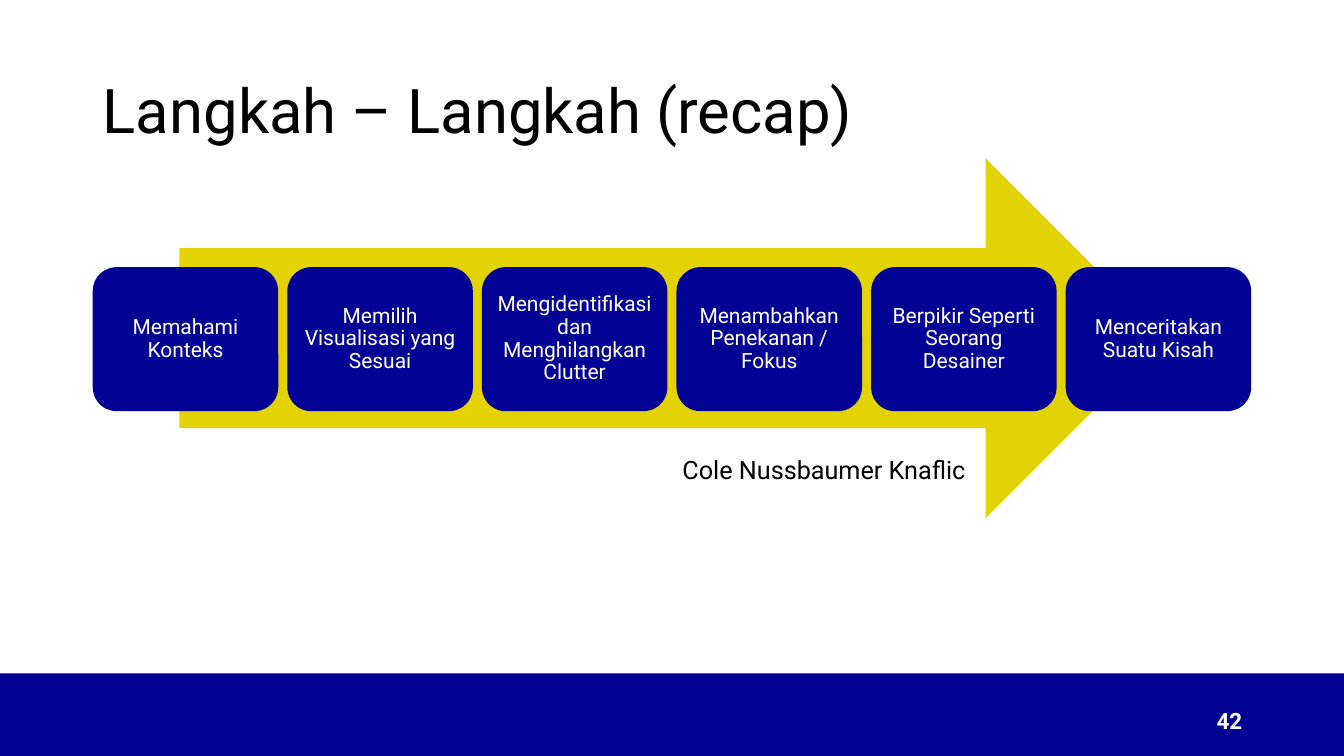
from dataclasses import dataclass

from pptx import Presentation
from pptx import util as u
from pptx.dml.color import RGBColor
from pptx.enum import shapes, text

COLORS = {"navy": "020294", "yellow": "E4D304", "white": "FFFFFF", "black": "000000"}
FONT = "Roboto"
STEPS = [
    "Memahami Konteks",
    "Memilih Visualisasi yang Sesuai",
    "Mengidentifikasi dan Menghilangkan Clutter",
    "Menambahkan Penekanan / Fokus",
    "Berpikir Seperti Seorang Desainer",
    "Menceritakan Suatu Kisah",
]
STEP_LEFT, STEP_PITCH = 0.92, 1.93


@dataclass(frozen=True)
class Box:
    """Position and size in inches."""

    left: float
    top: float
    width: float
    height: float

    def lengths(self) -> tuple[u.Length, ...]:
        """Return the four lengths as slide units."""
        return tuple(u.Inches(v) for v in (self.left, self.top, self.width, self.height))


@dataclass(frozen=True)
class Style:
    """Look of one line of text."""

    size: float
    color: str
    align: text.PP_ALIGN = text.PP_ALIGN.LEFT
    bold: bool = False
    line_spacing: float = 1.0
    anchor: text.MSO_ANCHOR = text.MSO_ANCHOR.MIDDLE


def write(shape, wording: str, style: Style) -> None:
    """Put one formatted run into a shape."""
    frame = shape.text_frame
    frame.word_wrap = True
    frame.auto_size = text.MSO_AUTO_SIZE.NONE
    frame.vertical_anchor = style.anchor
    paragraph = frame.paragraphs[0]
    paragraph.alignment = style.align
    paragraph.line_spacing = style.line_spacing
    run = paragraph.add_run()
    run.text = wording
    run.font.name = FONT
    run.font.size = u.Pt(style.size)
    run.font.bold = style.bold
    run.font.color.rgb = RGBColor.from_string(COLORS[style.color])


def add_block(slide, kind: shapes.MSO_SHAPE, box: Box, color: str):
    """Add a flat filled shape without an outline."""
    shape = slide.shapes.add_shape(kind, *box.lengths())
    shape.shadow.inherit = False
    shape.fill.solid()
    shape.fill.fore_color.rgb = RGBColor.from_string(COLORS[color])
    shape.line.fill.background()
    return shape


def add_label(slide, box: Box, wording: str, style: Style) -> None:
    """Add a text box with one line."""
    write(slide.shapes.add_textbox(*box.lengths()), wording, style)


def add_step(slide, box: Box, wording: str) -> None:
    """Add one rounded step with its centred text."""
    shape = add_block(slide, shapes.MSO_SHAPE.ROUNDED_RECTANGLE, box, "navy")
    frame = shape.text_frame
    frame.margin_left = frame.margin_right = u.Inches(0.06)
    frame.margin_top = frame.margin_bottom = u.Inches(0.06)
    write(shape, wording, Style(15, "white", text.PP_ALIGN.CENTER, line_spacing=0.9))


def main() -> None:
    """Build and save the slide."""
    presentation = Presentation()
    presentation.slide_width = u.Inches(13.33)
    presentation.slide_height = u.Inches(7.5)
    slide = presentation.slides.add_slide(presentation.slide_layouts[5])

    add_block(slide, shapes.MSO_SHAPE.RECTANGLE, Box(0, 6.68, 13.33, 0.82), "navy")
    title = slide.shapes.title
    title.left, title.top, title.width, title.height = Box(0.92, 0.4, 11.5, 1.45).lengths()
    write(title, "Langkah – Langkah (recap)", Style(44, "black", line_spacing=0.9))
    add_label(slide, Box(9.42, 6.95, 3, 0.4), "42",
              Style(16, "white", text.PP_ALIGN.RIGHT, bold=True))

    add_block(slide, shapes.MSO_SHAPE.RIGHT_ARROW, Box(1.78, 1.57, 9.78, 3.57), "yellow")
    for index, wording in enumerate(STEPS):
        add_step(slide, Box(STEP_LEFT + index * STEP_PITCH, 2.65, 1.84, 1.43), wording)
    add_label(slide, Box(6.67, 4.46, 3.09, 0.4), "Cole Nussbaumer Knaflic",
              Style(18, "black", anchor=text.MSO_ANCHOR.TOP))

    presentation.save("out.pptx")


if __name__ == "__main__":
    main()
